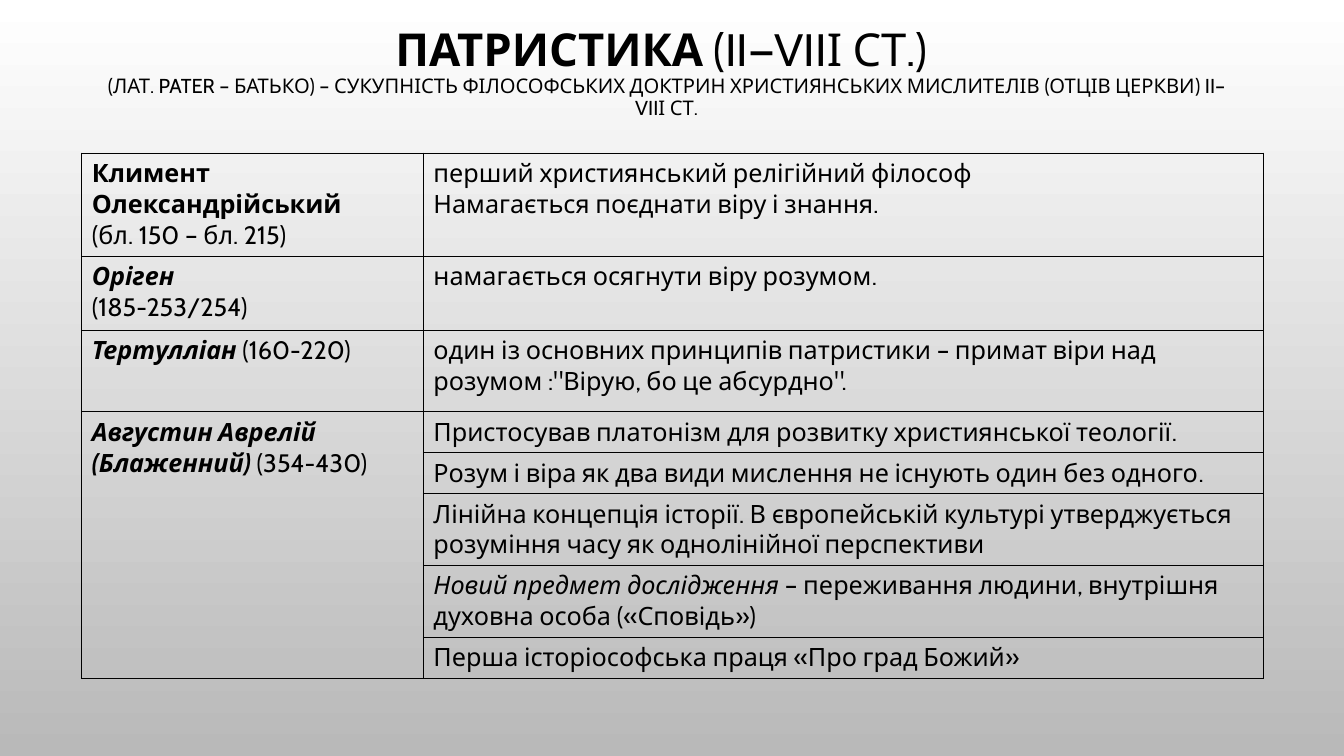
from lxml import etree
from pptx import Presentation
from pptx import util as u
from pptx.dml.color import RGBColor
from pptx.enum import text
from pptx.oxml.ns import qn

BOLD, ITALIC, BOLD_ITALIC = "b", "i", "bi"

# Each cell is a list of paragraphs, each paragraph a list of (wording, style) runs.
THINKERS = [
    ([[("Климент Олександрійський", BOLD)], [("(бл. 150 – бл. 215)", "")]],
     [[[("перший християнський релігійний філософ", "")],
       [("Намагається поєднати віру і знання.", "")]]]),
    ([[("Оріген", BOLD_ITALIC)], [("(185-253/254)", "")]],
     [[[("намагається осягнути віру розумом.", "")]]]),
    ([[("Тертулліан", BOLD_ITALIC), (" (160-220) ", "")]],
     [[[("один із основних принципів патристики – примат віри над "
         "розумом :\"Вірую, бо це абсурдно\".", "")]]]),
    ([[("Августин Аврелій (Блаженний)", BOLD_ITALIC), (" (354-430)", "")]],
     [[[("Пристосував платонізм для розвитку християнської теології.", "")]],
      [[("Розум і віра як два види мислення не існують один без одного.", "")]],
      [[("Лінійна концепція історії. В європейській культурі утверджується "
         "розуміння часу як однолінійної перспективи", "")]],
      [[("Новий предмет дослідження ", ITALIC),
        ("– переживання людини, внутрішня духовна особа («Сповідь»)", "")]],
      [[("Перша історіософська праця «Про град Божий»", "")]]]),
]
COLUMN_WIDTHS = [8.61, 21.18]
ROW_HEIGHTS = [2.6, 1.87, 2.05, 1.03, 1.03, 1.81, 1.81, 1.03]


def color(hex_value):
    return RGBColor.from_string(hex_value)


class SlideBuilder:
    FONT = "Cabin"
    INK = "000000"

    def __init__(self, presentation):
        self.slide = presentation.slides.add_slide(presentation.slide_layouts[6])

    def background(self, top, bottom):
        fill = self.slide.background.fill
        fill.gradient()
        fill.gradient_angle = 270
        for stop, shade in zip(fill.gradient_stops, (top, bottom)):
            stop.color.rgb = color(shade)

    def run(self, paragraph, wording, size, style=""):
        run = paragraph.add_run()
        run.text = wording
        font = run.font
        font.name, font.size = self.FONT, u.Pt(size)
        font.bold, font.italic = "b" in style, "i" in style
        font.color.rgb = color(self.INK)

    def title(self, left, top, width, height, lines):
        """Centred heading; each line is a list of (wording, size, style) runs."""
        box = self.slide.shapes.add_textbox(*map(u.Cm, (left, top, width, height)))
        frame = box.text_frame
        frame.word_wrap = True
        frame.vertical_anchor = text.MSO_ANCHOR.MIDDLE
        heading = frame.paragraphs[0]
        heading.alignment = text.PP_ALIGN.CENTER
        heading.line_spacing = 0.9
        for index, line in enumerate(lines):
            if index:
                heading.add_line_break()
            for part in line:
                self.run(heading, *part)

    def borders(self, cell, width=1):
        properties = cell._tc.get_or_add_tcPr()
        for side in ("lnL", "lnR", "lnT", "lnB"):
            line = etree.SubElement(properties, qn(f"a:{side}"), w=str(u.Pt(width)))
            fill = etree.SubElement(line, qn("a:solidFill"))
            etree.SubElement(fill, qn("a:srgbClr"), val=self.INK)

    def fill_cell(self, cell, paragraphs, size):
        for index, runs in enumerate(paragraphs):
            frame = cell.text_frame
            paragraph = frame.add_paragraph() if index else frame.paragraphs[0]
            for wording, style in runs:
                self.run(paragraph, wording, size, style)

    def table(self, left, top, widths, heights, groups, size=18):
        """Two columns; a group's first cell spans all of its ideas."""
        table = self.slide.shapes.add_table(
            len(heights), len(widths),
            *map(u.Cm, (left, top, sum(widths), sum(heights)))).table
        table.first_row = table.horz_banding = False
        for column, width in zip(table.columns, widths):
            column.width = u.Cm(width)
        for row, height in zip(table.rows, heights):
            row.height = u.Cm(height)
        for cell in table.iter_cells():
            self.borders(cell)
            cell.fill.background()
        first = 0
        for thinker, ideas in groups:
            name_cell = table.cell(first, 0)
            if len(ideas) > 1:
                name_cell.merge(table.cell(first + len(ideas) - 1, 0))
            self.fill_cell(name_cell, thinker, size)
            for row, idea in enumerate(ideas, first):
                self.fill_cell(table.cell(row, 1), idea, size)
            first += len(ideas)


def main():
    presentation = Presentation()
    presentation.slide_width, presentation.slide_height = u.Cm(33.87), u.Cm(19.05)
    builder = SlideBuilder(presentation)
    builder.background("FFFFFF", "B9B9B9")
    builder.title(2.41, 0.46, 28.78, 2.79, [
        [("ПАТРИСТИКА ", 32.4, BOLD), ("(II—VIIІ СТ.) ", 32.4)],
        [("(ЛАТ. PATER – БАТЬКО) – СУКУПНІСТЬ ФІЛОСОФСЬКИХ ДОКТРИН "
          "ХРИСТИЯНСЬКИХ МИСЛИТЕЛІВ (ОТЦІВ ЦЕРКВИ) II–VIIІ СТ.", 14.4)],
    ])
    builder.table(2.06, 3.86, COLUMN_WIDTHS, ROW_HEIGHTS, THINKERS)
    presentation.save("out.pptx")


if __name__ == "__main__":
    main()
